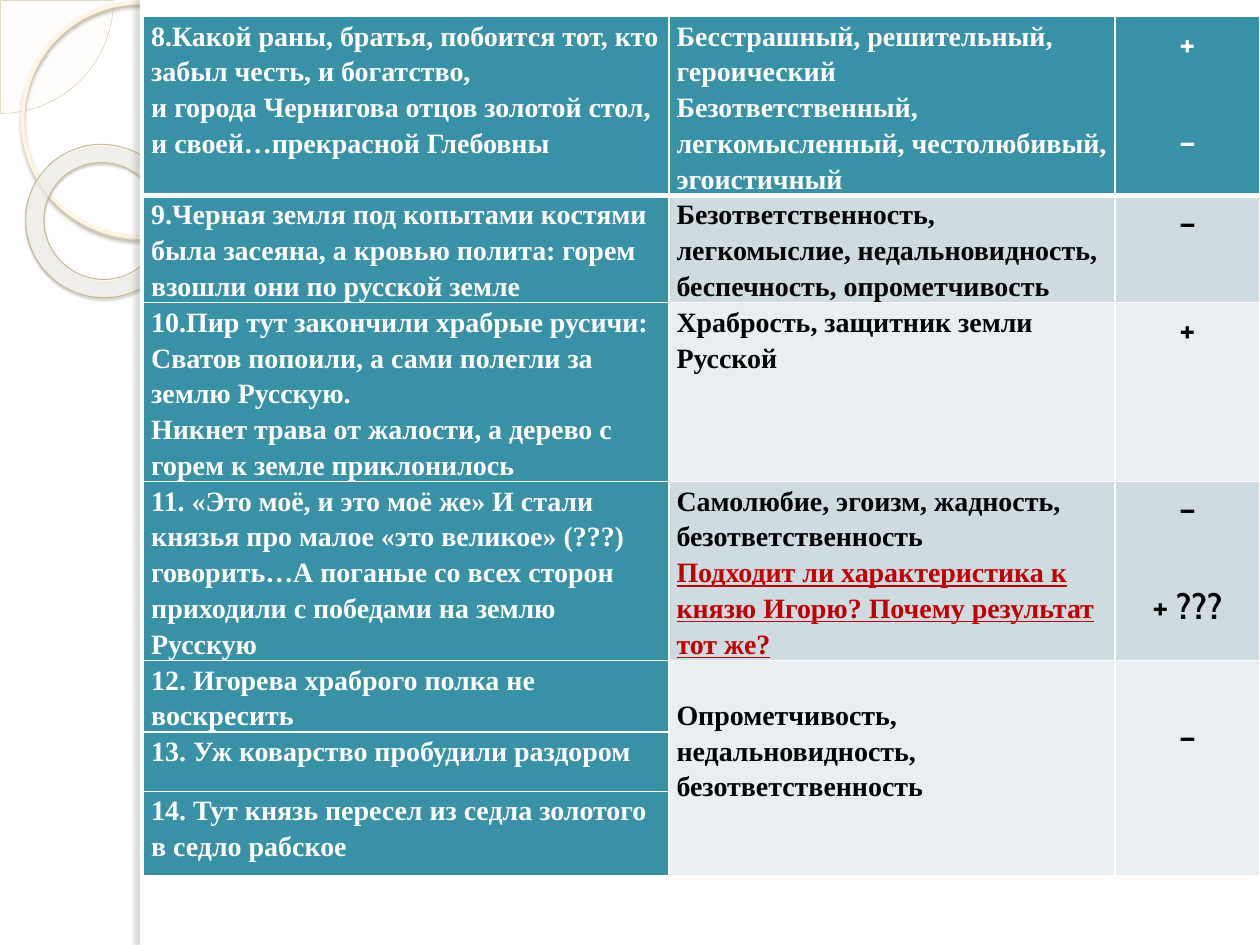
from dataclasses import dataclass

from lxml import etree
from pptx import Presentation
from pptx.dml.color import RGBColor
from pptx.enum.shapes import MSO_SHAPE
from pptx.enum.text import PP_ALIGN
from pptx.oxml import parse_xml
from pptx.oxml.ns import qn
from pptx.util import Inches, Pt

PIE, OVAL, DONUT, RECT = (MSO_SHAPE.CHORD.PIE, MSO_SHAPE.OVAL,
                          MSO_SHAPE.DONUT, MSO_SHAPE.RECTANGLE)
LEFT, CENTER = PP_ALIGN.LEFT, PP_ALIGN.CENTER
BLANK_LAYOUT = 6


@dataclass(frozen=True)
class Theme:
    white: str = "FFFFFF"
    black: str = "000000"
    accent: str = "3891A7"
    band_dark: str = "CEDCE1"
    band_light: str = "E8EEF1"
    question: str = "C00000"
    petal: str = "FEFAF4"
    petal_line: str = "D3C39F"
    ring: str = "FFF5DE"
    ring_shadow: str = "B0A68F"
    donut_line: str = "C7B893"
    donut_shadow: str = "5A5444"
    edge_shadow: str = "736F63"
    donut_stops: tuple = ((0, "FFFCF6", 70), (70, "FFFEFB", 55), (100, "F0D28E", 60))
    text_font: str = "Times New Roman"
    sign_font: str = "Cabin"
    text_size: int = 16
    sign_size: int = 20
    line_spacing: float = 1.15
    sign_gap: int = 28


THEME = Theme()
COLUMNS = (4.17, 3.54, 1.15)
ROW_HEIGHTS = (1.41, 0.85, 1.42, 1.42, 0.57, 0.47, 0.67)
QUESTION = "Подходит ли характеристика к князю Игорю? Почему результат тот же?"
QUOTES = (
    ("8.Какой раны, братья, побоится тот, кто забыл честь, и богатство,",
     "и города Чернигова отцов золотой стол,",
     "и своей…прекрасной Глебовны"),
    ("9.Черная земля под копытами костями была засеяна, а кровью полита: "
     "горем взошли они по русской земле",),
    ("10.Пир тут закончили храбрые русичи:",
     "Сватов попоили, а сами полегли за землю Русскую.",
     "Никнет трава от жалости, а дерево с горем к земле приклонилось"),
    ("11. «Это моё, и это моё же» И стали князья про малое «это великое» (???)",
     "говорить…А поганые со всех сторон приходили с победами на землю Русскую"),
    ("12. Игорева храброго полка не воскресить",),
    ("13. Уж коварство пробудили раздором",),
    ("14. Тут князь пересел из седла золотого в седло рабское",),
)
TRAITS = (
    ("Бесстрашный, решительный, героический",
     "Безответственный, легкомысленный, честолюбивый, эгоистичный"),
    ("Безответственность, легкомыслие, недальновидность, беспечность, опрометчивость",),
    ("Храбрость, защитник земли Русской",),
    ("Самолюбие, эгоизм, жадность, безответственность", QUESTION),
    ("Опрометчивость,", "недальновидность,", "безответственность"),
)
SIGNS = (("+", "–"), ("–",), ("+",), ("–", "+ ???"), ("–",))


def rgb(color):
    return RGBColor.from_string(color)


def add_color(parent, color, alpha):
    node = etree.SubElement(parent, qn("a:srgbClr"), val=color)
    etree.SubElement(node, qn("a:alpha"), val=str(alpha * 1000))


def add_ornament(slide, kind, box, fill=None, line=None, shadow=None):
    ornament = slide.shapes.add_shape(kind, *map(Inches, box))
    ornament.shadow.inherit = False
    if fill:
        ornament.fill.solid()
        ornament.fill.fore_color.rgb = rgb(fill)
    else:
        ornament.fill.background()
    if line:
        ornament.line.color.rgb = rgb(line[0])
        ornament.line.width = Pt(line[1])
    else:
        ornament.line.fill.background()
    if shadow:
        color, alpha, blur, distance, angle = shadow
        effects = ornament.element.spPr.find(qn("a:effectLst"))
        outer = etree.SubElement(
            effects, qn("a:outerShdw"), blurRad=str(Pt(blur)), dist=str(Pt(distance)),
            dir=str(angle * 60000), algn="tl", rotWithShape="0")
        add_color(outer, color, alpha)
    return ornament


def set_radial_fill(ornament, stops):
    gradient = parse_xml(
        '<a:gradFill xmlns:a="http://schemas.openxmlformats.org/drawingml/2006/main">'
        '<a:gsLst/><a:path path="circle"><a:fillToRect l="-408000" t="-50000" '
        'r="508000" b="150000"/></a:path></a:gradFill>')
    for position, color, alpha in stops:
        stop = etree.SubElement(gradient[0], qn("a:gs"), pos=str(position * 1000))
        add_color(stop, color, alpha)
    properties = ornament.element.spPr
    properties.replace(properties.find(qn("a:noFill")), gradient)


def add_backdrop(slide, box):
    left, top, width, height = box
    petal = add_ornament(slide, PIE, (left - 0.89, top - 0.89, 1.79, 1.79),
                         THEME.petal, (THEME.petal_line, 0.25))
    petal.adjustments[0] = 0
    petal.adjustments[1] = 54
    petal_color = petal.element.spPr.find(qn("a:solidFill"))[0]
    etree.SubElement(petal_color, qn("a:alpha"), val="33000")
    add_ornament(slide, OVAL, (left + 0.18, top + 0.02, 1.86, 1.86),
                 line=(THEME.ring, 2.15), shadow=(THEME.ring_shadow, 85, 2, 2, 90))
    donut = add_ornament(slide, DONUT, (left + 0.2, top + 1.15, 1.23, 1.21),
                         line=(THEME.donut_line, 0.58),
                         shadow=(THEME.donut_shadow, 35, 1, 1.2, 75))
    donut.rotation = 38.6
    donut.adjustments[0] = 0.12
    set_radial_fill(donut, THEME.donut_stops)
    margin = 1.11
    add_ornament(slide, RECT, (left + margin, top, width - margin, height), THEME.white)
    add_ornament(slide, RECT, (left + margin, top, 0.08, height), THEME.white,
                 shadow=(THEME.edge_shadow, 25, 3, 3, 180))


def set_borders(cell, bottom):
    properties = cell._tc.get_or_add_tcPr()
    for index, (side, width) in enumerate((("L", 1), ("R", 1), ("T", 1), ("B", bottom))):
        border = etree.Element(qn(f"a:ln{side}"), w=str(Pt(width)))
        fill = etree.SubElement(border, qn("a:solidFill"))
        etree.SubElement(fill, qn("a:srgbClr"), val=THEME.white)
        properties.insert(index, border)


def fill_cell(cell, lines, fill, color, sign=False, top=0, bottom=1):
    cell.fill.solid()
    cell.fill.fore_color.rgb = rgb(fill)
    set_borders(cell, bottom)
    cell.margin_left = cell.margin_right = Inches(0.06)
    cell.margin_top, cell.margin_bottom = Inches(top), 0
    frame = cell.text_frame
    for index, line in enumerate(lines):
        paragraph = frame.add_paragraph() if index else frame.paragraphs[0]
        paragraph.alignment = CENTER if sign else LEFT
        paragraph.line_spacing = THEME.line_spacing
        if sign and index:
            paragraph.space_before = Pt(THEME.sign_gap)
        run = paragraph.add_run()
        run.text = line
        run.font.name = THEME.sign_font if sign else THEME.text_font
        run.font.size = Pt(THEME.sign_size if sign else THEME.text_size)
        run.font.bold = True
        run.font.underline = line == QUESTION
        run.font.color.rgb = rgb(THEME.question if line == QUESTION else color)


def add_quote_table(slide, box):
    table = slide.shapes.add_table(len(QUOTES), len(COLUMNS), *map(Inches, box)).table
    for column, width in zip(table.columns, COLUMNS):
        column.width = Inches(width)
    for row, height in zip(table.rows, ROW_HEIGHTS):
        row.height = Inches(height)
    last = len(TRAITS) - 1
    for column in (1, 2):
        table.cell(last, column).merge(table.cell(len(QUOTES) - 1, column))
    for row, quote in enumerate(QUOTES):
        fill_cell(table.cell(row, 0), quote, THEME.accent, THEME.white,
                  bottom=1 if row else 3)
    for row, (traits, signs) in enumerate(zip(TRAITS, SIGNS)):
        band = THEME.band_dark if row % 2 else THEME.band_light
        fill, color = (band, THEME.black) if row else (THEME.accent, THEME.white)
        bottom = 1 if row else 3
        trait_top, sign_top = (0.28, 0.39) if row == last else (0, 0)
        fill_cell(table.cell(row, 1), traits, fill, color, top=trait_top, bottom=bottom)
        fill_cell(table.cell(row, 2), signs, fill, color, True, sign_top, bottom)


def main():
    presentation = Presentation()
    presentation.slide_width, presentation.slide_height = Inches(10), Inches(7.5)
    slide = presentation.slides.add_slide(presentation.slide_layouts[BLANK_LAYOUT])
    add_backdrop(slide, (0, 0, 10, 7.5))
    add_quote_table(slide, (1.14, 0.13, sum(COLUMNS), sum(ROW_HEIGHTS)))
    presentation.save("out.pptx")


if __name__ == "__main__":
    main()
